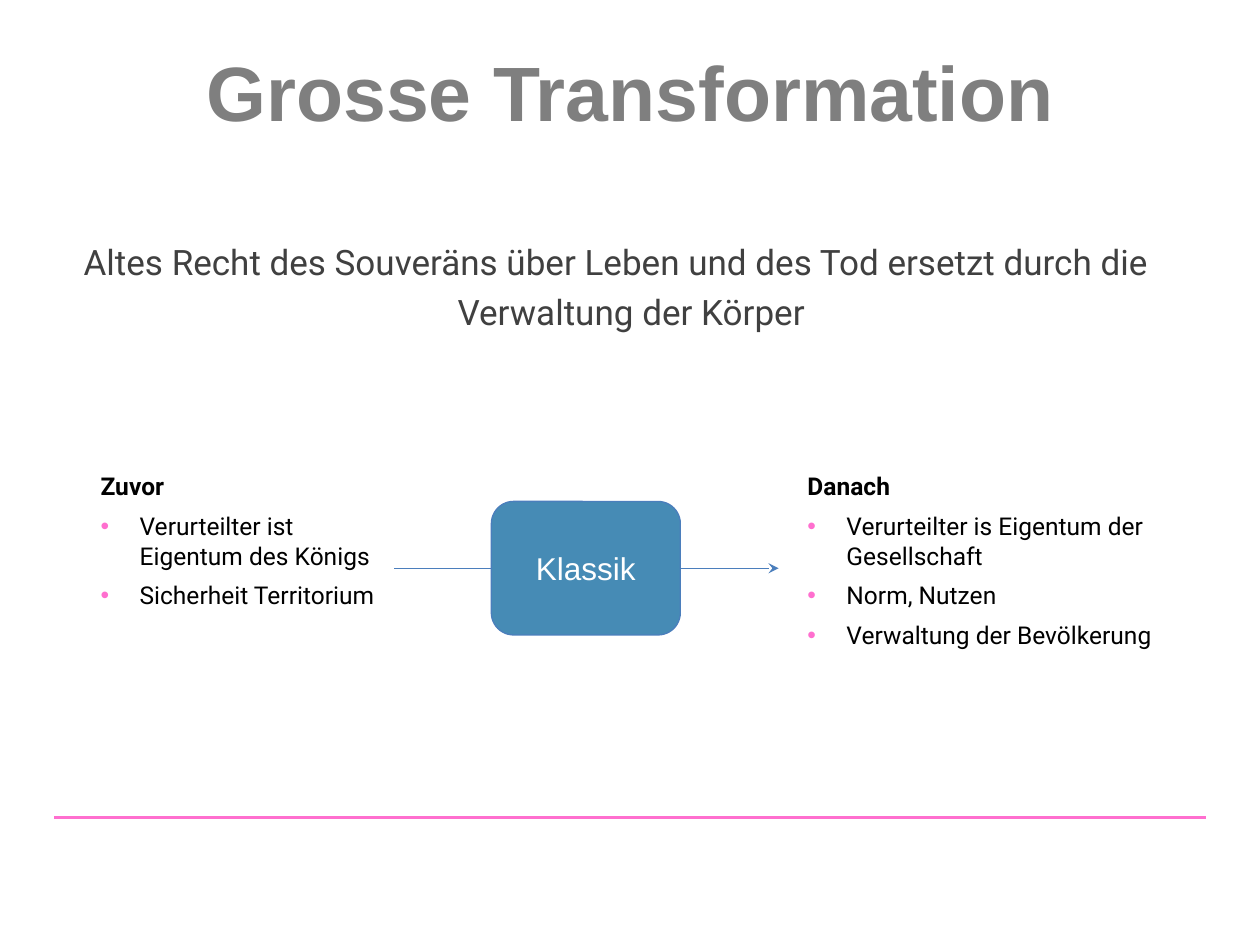
import dataclasses

import pptx
import pptx.dml.color
import pptx.enum.shapes
import pptx.enum.text
import pptx.oxml
import pptx.oxml.ns
import pptx.util

Inches, Pt = pptx.util.Inches, pptx.util.Pt
RGB = pptx.dml.color.RGBColor.from_string
Align = pptx.enum.text.PP_ALIGN
Anchor = pptx.enum.text.MSO_ANCHOR


@dataclasses.dataclass(frozen=True)
class Theme:
    heading_font: str = "Arial"
    body_font: str = "Roboto"
    title_size: int = 44
    lead_size: int = 20
    stage_size: int = 18
    list_size: int = 14
    title_color: str = "7F7F7F"
    lead_color: str = "404040"
    list_color: str = "000000"
    accent: str = "FF6FCF"
    stage_fill: str = "468BB5"
    stage_text: str = "FFFFFF"
    outline: str = "4B7EBC"


THEME = Theme()


def place(shape, left, top, width, height):
    shape.left, shape.top = Inches(left), Inches(top)
    shape.width, shape.height = Inches(width), Inches(height)


def style(para, name, size, color, bold=False):
    font = para.font
    font.name, font.size, font.bold = name, Pt(size), bold
    font.color.rgb = RGB(color)


def add_xml(parent, tag, **attributes):
    element = pptx.oxml.parse_xml(f"<a:{tag} {pptx.oxml.ns.nsdecls('a')}/>")
    for key, value in attributes.items():
        element.set(key, value)
    parent.append(element)
    return element


def set_indent(para, hanging):
    properties = para._p.get_or_add_pPr()
    properties.set("marL", str(Inches(hanging)))
    properties.set("indent", str(-Inches(hanging)))
    return properties


def add_line(page, start, end, color, weight, arrow=False):
    points = [Inches(value) for value in (*start, *end)]
    line = page.shapes.add_connector(
        pptx.enum.shapes.MSO_CONNECTOR.STRAIGHT, *points)
    line.line.color.rgb = RGB(color)
    line.line.width = Pt(weight)
    if arrow:
        add_xml(line.line._get_or_add_ln(), "tailEnd", type="stealth")
    add_xml(line._element.spPr, "effectLst")


def fill_title(page, box, text):
    title = page.shapes.title
    place(title, *box)
    frame = title.text_frame
    frame.text = text
    frame.word_wrap = False
    frame.auto_size = pptx.enum.text.MSO_AUTO_SIZE.SHAPE_TO_FIT_TEXT
    frame.vertical_anchor = Anchor.MIDDLE
    para = frame.paragraphs[0]
    para.alignment = Align.CENTER
    style(para, THEME.heading_font, THEME.title_size, THEME.title_color, True)


def fill_lead(page, box, text):
    body = page.placeholders[1]
    place(body, *box)
    body.text_frame.text = text
    para = body.text_frame.paragraphs[0]
    para.alignment = Align.CENTER
    para.line_spacing = 1.2
    para.space_before = Pt(0)
    add_xml(set_indent(para, 0.24), "buNone")
    style(para, THEME.body_font, THEME.lead_size, THEME.lead_color)


def add_list(page, box, heading, items):
    frame = page.shapes.add_textbox(*map(Inches, box)).text_frame
    frame.word_wrap = True
    frame.text = "\n".join([heading, *items])
    for index, para in enumerate(frame.paragraphs):
        is_item = index > 0
        para.space_after = Pt(6)
        properties = set_indent(para, 0.31 if is_item else 0.24)
        if is_item:
            add_xml(add_xml(properties, "buClr"), "srgbClr", val=THEME.accent)
            add_xml(properties, "buFont", typeface=THEME.heading_font)
            add_xml(properties, "buChar", char="•")
        style(para, THEME.body_font, THEME.list_size, THEME.list_color,
              not is_item)


def add_stage(page, box, text, reach):
    """Draw the labelled stage on an arrow that spans the reach (left, right)."""
    left, top, width, height = box
    middle = top + height / 2
    add_line(page, (reach[0], middle), (reach[1], middle),
             THEME.outline, 0.75, arrow=True)
    stage = page.shapes.add_shape(
        pptx.enum.shapes.MSO_SHAPE.ROUNDED_RECTANGLE, *map(Inches, box))
    stage.shadow.inherit = False
    stage.fill.solid()
    stage.fill.fore_color.rgb = RGB(THEME.stage_fill)
    stage.line.color.rgb = RGB(THEME.outline)
    stage.line.width = Pt(0.75)
    frame = stage.text_frame
    frame.text = text
    frame.vertical_anchor = Anchor.MIDDLE
    para = frame.paragraphs[0]
    para.alignment = Align.CENTER
    style(para, THEME.heading_font, THEME.stage_size, THEME.stage_text)


def main():
    deck = pptx.Presentation()
    deck.slide_width, deck.slide_height = Inches(10), Inches(7.5)
    page = deck.slides.add_slide(deck.slide_layouts[1])

    add_line(page, (0.43, 6.49), (9.57, 6.49), THEME.accent, 2)
    fill_title(page, (1.49, 0.3, 7.03, 0.84), "Grosse Transformation")
    fill_lead(page, (0.39, 1.79, 9, 1.1),
              "Altes Recht des Souveräns über Leben und des Tod "
              "ersetzt durch die Verwaltung der Körper")
    add_list(page, (0.7, 3.69, 2.42, 1.65), "Zuvor",
             ["Verurteilter ist Eigentum des Königs",
              "Sicherheit Territorium"])
    add_list(page, (6.31, 3.69, 3.05, 1.65), "Danach",
             ["Verurteilter is Eigentum der Gesellschaft",
              "Norm, Nutzen",
              "Verwaltung der Bevölkerung"])
    add_stage(page, (3.9, 3.98, 1.5, 1.06), "Klassik", reach=(3.13, 6.18))

    deck.save("out.pptx")


if __name__ == "__main__":
    main()
